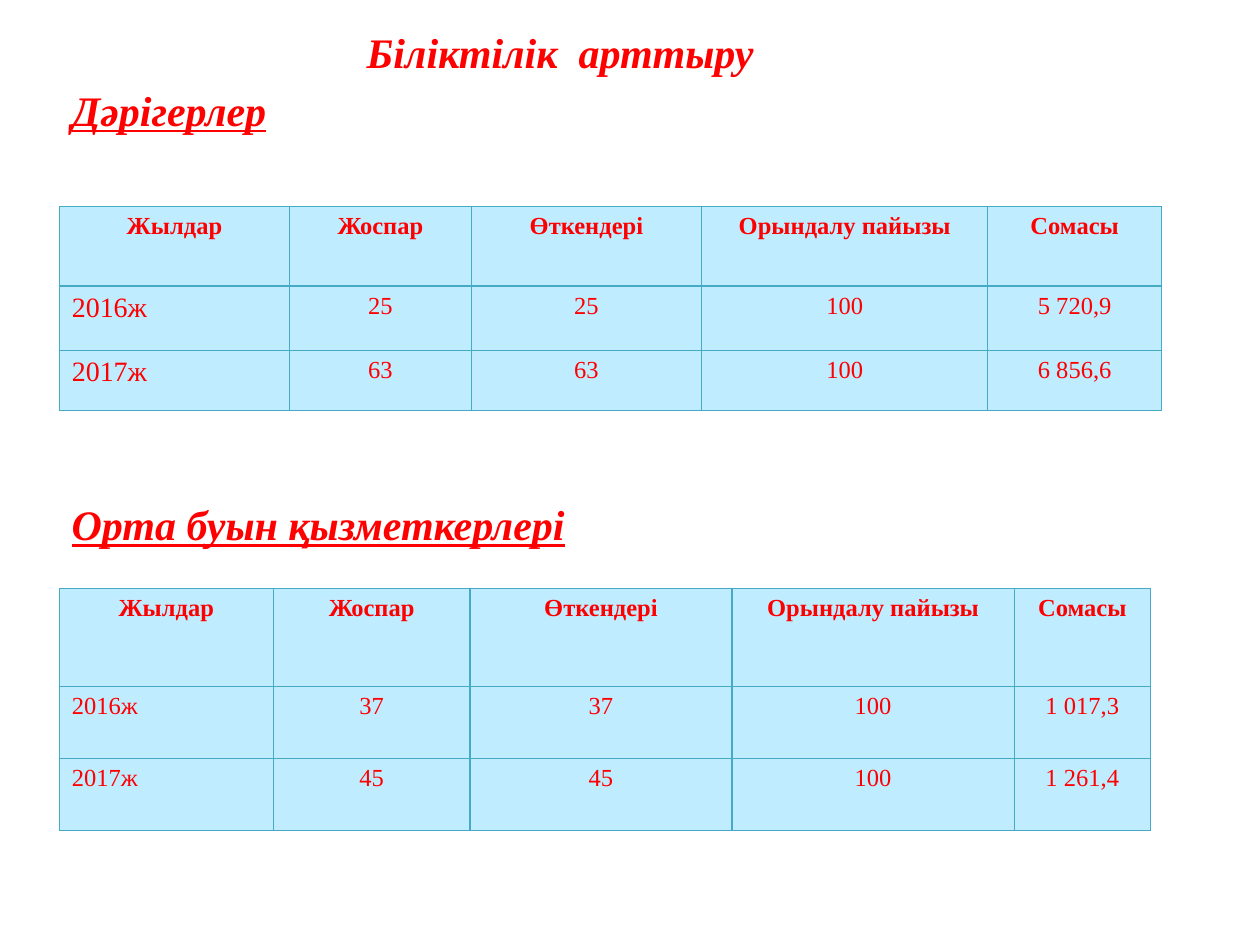
from lxml.etree import SubElement
from pptx import Presentation
from pptx.dml.color import RGBColor
from pptx.enum.text import MSO_ANCHOR, MSO_AUTO_SIZE, PP_ALIGN
from pptx.oxml.ns import qn
from pptx.util import Inches, Pt

COLORS = {"text": "FF0000", "cell": "BFECFF", "border": "46AAC5"}
FONT = "Times New Roman"
HEADERS = ["Жылдар", "Жоспар", "Өткендері", "Орындалу пайызы", "Сомасы"]


def add_text(paragraph, text, size, bold=False, italic=False, underline=None):
    run = paragraph.add_run()
    run.text = text
    font = run.font
    font.name, font.size = FONT, Pt(size)
    font.bold, font.italic, font.underline = bold, italic, underline
    font.color.rgb = RGBColor.from_string(COLORS["text"])


def add_borders(cell):
    properties = cell._tc.get_or_add_tcPr()
    for side in ("lnL", "lnR", "lnT", "lnB"):
        line = SubElement(properties, qn(f"a:{side}"), w=str(Pt(0.75)))
        fill = SubElement(line, qn("a:solidFill"))
        SubElement(fill, qn("a:srgbClr"), val=COLORS["border"])


prs = Presentation()
prs.slide_width, prs.slide_height = Inches(10), Inches(7.5)
slide = prs.slides.add_slide(prs.slide_layouts[5])

staff_groups = [
    {
        "top": 1.64,
        "widths": [1.83, 1.44, 1.83, 2.27, 1.38],
        "heights": [0.63, 0.51, 0.48],
        "year_size": 16,
        "rows": [["2016ж", "25", "25", "100", "5 720,9"],
                 ["2017ж", "63", "63", "100", "6 856,6"]],
    },
    {
        "top": 4.67,
        "widths": [1.7, 1.56, 2.08, 2.24, 1.08],
        "heights": [0.78, 0.57, 0.57],
        "year_size": 14,
        "rows": [["2016ж", "37", "37", "100", "1 017,3"],
                 ["2017ж", "45", "45", "100", "1 261,4"]],
    },
]

for group in staff_groups:
    training = slide.shapes.add_table(
        3, 5, Inches(0.47), Inches(group["top"]),
        Inches(sum(group["widths"])), Inches(sum(group["heights"]))).table
    for column, width in zip(training.columns, group["widths"]):
        column.width = Inches(width)
    for row, height in zip(training.rows, group["heights"]):
        row.height = Inches(height)
    for r, values in enumerate([HEADERS] + group["rows"]):
        for c, value in enumerate(values):
            cell = training.cell(r, c)
            add_borders(cell)
            cell.fill.solid()
            cell.fill.fore_color.rgb = RGBColor.from_string(COLORS["cell"])
            is_year = r > 0 and c == 0
            paragraph = cell.text_frame.paragraphs[0]
            paragraph.alignment = PP_ALIGN.LEFT if is_year else PP_ALIGN.CENTER
            add_text(paragraph, value, group["year_size"] if is_year else 14, bold=r == 0)

for heading, top, width in [("Дәрігерлер", 0.62, 9.06),
                            ("Орта буын қызметкерлері", 3.91, 8.83)]:
    frame = slide.shapes.add_textbox(
        Inches(0.47), Inches(top), Inches(width), Inches(0.5)).text_frame
    frame.word_wrap = True
    frame.auto_size = MSO_AUTO_SIZE.SHAPE_TO_FIT_TEXT
    add_text(frame.paragraphs[0], heading, 24, bold=True, italic=True, underline=True)

title = slide.shapes.title
title.left, title.top = Inches(2.81), Inches(0.16)
title.width, title.height = Inches(5.78), Inches(0.5)
title.text_frame.word_wrap = True
title.text_frame.auto_size = MSO_AUTO_SIZE.SHAPE_TO_FIT_TEXT
title.text_frame.vertical_anchor = MSO_ANCHOR.TOP
title_line = title.text_frame.paragraphs[0]
title_line.alignment = PP_ALIGN.LEFT
add_text(title_line, "Біліктілік  арттыру", 24, bold=True, italic=True)

prs.save("out.pptx")
